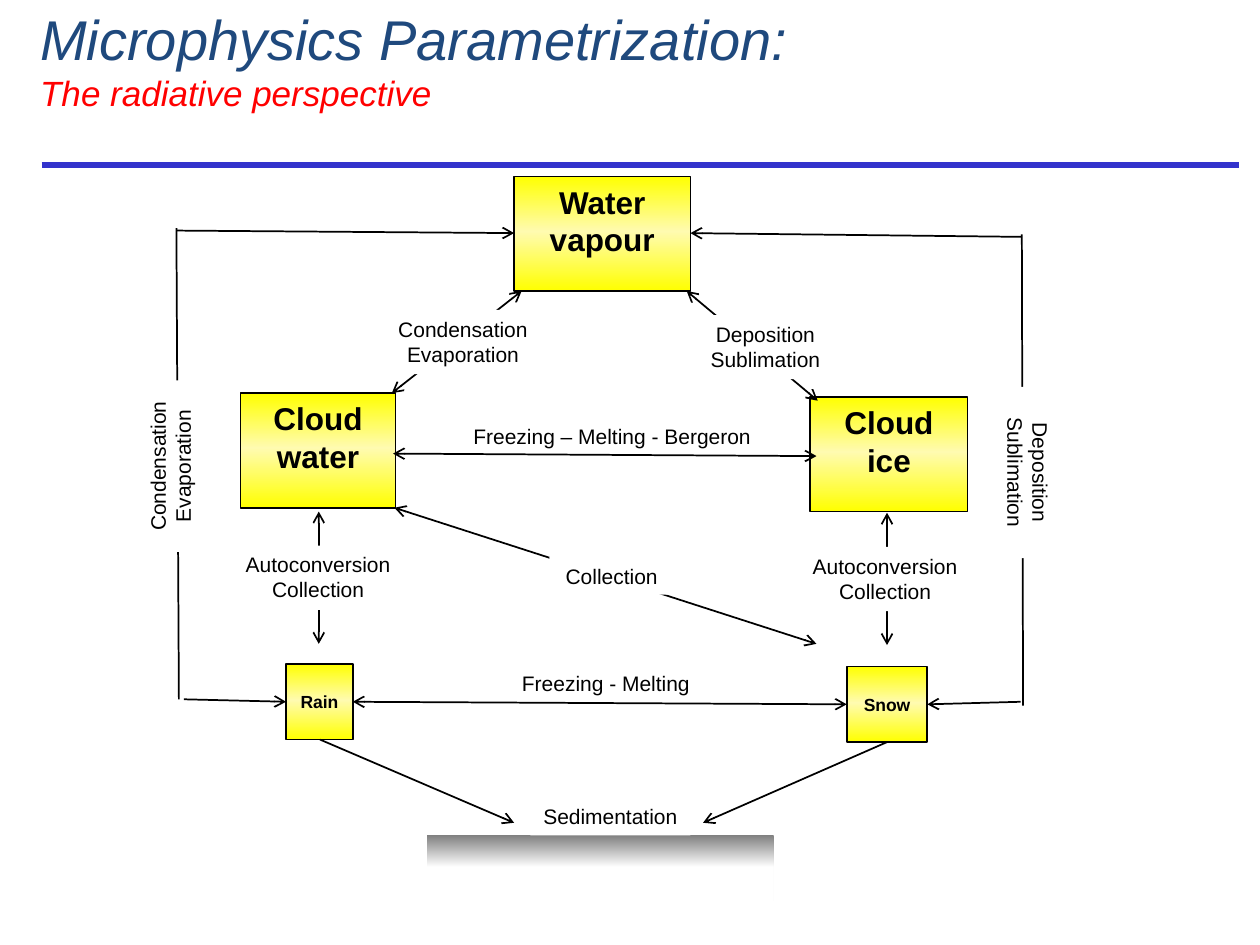
from lxml.etree import SubElement
from pptx import Presentation
from pptx.dml.color import RGBColor
from pptx.enum.shapes import MSO_CONNECTOR, MSO_SHAPE
from pptx.enum.text import MSO_ANCHOR, PP_ALIGN
from pptx.oxml.ns import qn
from pptx.util import Inches, Pt

BLACK = RGBColor(0x00, 0x00, 0x00)
WHITE = RGBColor(0xFF, 0xFF, 0xFF)
NAVY = RGBColor(0x1F, 0x49, 0x7D)
RED = RGBColor(0xFF, 0x00, 0x00)
BLUE = RGBColor(0x33, 0x33, 0xCC)
YELLOW = RGBColor(0xFF, 0xFF, 0x00)
CREAM = RGBColor(0xFF, 0xFB, 0xB0)
GREY = RGBColor(0x80, 0x80, 0x80)

YELLOW_STOPS = [(0, YELLOW), (48, CREAM), (100, YELLOW)]
GREY_STOPS = [(0, GREY), (49, WHITE)]

RESERVOIRS = [
    ("Water vapour", (4.08, 1.4, 1.4, 0.91), 18, MSO_ANCHOR.TOP),
    ("Cloud water", (1.91, 3.12, 1.23, 0.91), 18, MSO_ANCHOR.TOP),
    ("Cloud ice", (6.43, 3.15, 1.25, 0.91), 18, MSO_ANCHOR.TOP),
    ("Rain", (2.27, 5.27, 0.53, 0.6), 10, MSO_ANCHOR.MIDDLE),
    ("Snow", (6.72, 5.29, 0.64, 0.6), 10, MSO_ANCHOR.MIDDLE),
]
EXCHANGES = [
    (3.11, 3.12, 4.14, 2.31),
    (5.45, 2.31, 6.49, 3.18),
    (7.04, 4.07, 7.04, 5.12),
    (2.53, 4.06, 2.53, 5.11),
    (2.8, 5.57, 6.72, 5.59),
    (3.12, 3.6, 6.48, 3.62),
    (3.13, 4.03, 6.48, 5.11),
]
ONE_WAY = [
    (1.4, 1.83, 4.08, 1.85),
    (1.46, 5.55, 2.27, 5.57),
    (8.11, 1.88, 5.48, 1.85),
    (8.1, 5.57, 7.36, 5.59),
    (2.54, 5.87, 4.08, 6.53),
    (7.04, 5.89, 5.58, 6.53),
]
SIDES = [(1.4, 1.81, 1.42, 5.55), (8.11, 1.86, 8.12, 5.6)]
PLAIN_LABELS = [
    ("Freezing - Melting", (3.41, 5.27, 2.8, 0.3)),
    ("Freezing – Melting - Bergeron", (3.46, 3.31, 2.8, 0.3)),
]
MASKING_LABELS = [
    ("Autoconversion Collection", (6.14, 4.34, 1.77, 0.51), None),
    ("Autoconversion Collection", (1.64, 4.33, 1.77, 0.51), None),
    ("Deposition Sublimation", (5.19, 2.5, 1.77, 0.51), None),
    ("Condensation Evaporation", (2.79, 2.46, 1.77, 0.51), None),
    ("Collection", (4.36, 4.42, 0.99, 0.3), None),
    ("Condensation Evaporation", (1.1, 3.02, 0.61, 1.36), "vert270"),
    ("Deposition Sublimation", (7.8, 3.07, 0.61, 1.36), "vert"),
    ("Sedimentation", (4.21, 6.33, 1.27, 0.3), None),
]


def inches(box):
    """Turn a tuple of numbers into lengths."""
    return [Inches(v) for v in box]


def add_run(p, text, size, color, bold=False, italic=False):
    """Add one Arial run to a paragraph."""
    r = p.add_run()
    r.text = text
    r.font.name = "Arial"
    r.font.size = Pt(size)
    r.font.color.rgb = color
    r.font.bold = bold
    r.font.italic = italic


def set_gradient(sp, stops):
    """Fill a shape with a top-to-bottom gradient."""
    sp.fill.gradient()
    sp.fill.gradient_angle = 270
    gs_lst = sp._element.spPr.find(qn("a:gradFill")).find(qn("a:gsLst"))
    for gs in list(gs_lst):
        gs_lst.remove(gs)
    for pos, color in stops:
        gs = SubElement(gs_lst, qn("a:gs"), pos=str(pos * 1000))
        SubElement(gs, qn("a:srgbClr"), val=str(color))


def add_rect(s, box):
    """Add a rectangle without shadow or outline."""
    sp = s.shapes.add_shape(MSO_SHAPE.RECTANGLE, *inches(box))
    sp.shadow.inherit = False
    sp.line.fill.background()
    return sp


def set_centred(sp, text, size, anchor=MSO_ANCHOR.TOP, bold=False):
    """Write one centred, wrapped paragraph in a shape."""
    tf = sp.text_frame
    tf.word_wrap = True
    tf.vertical_anchor = anchor
    p = tf.paragraphs[0]
    p.alignment = PP_ALIGN.CENTER
    add_run(p, text, size, BLACK, bold)


def add_line(s, ends, color=BLACK, width=1, head=False, tail=False):
    """Draw a straight line with optional arrowheads."""
    cn = s.shapes.add_connector(MSO_CONNECTOR.STRAIGHT, *inches(ends))
    cn.line.color.rgb = color
    cn.line.width = Pt(width)
    ln = cn.line._get_or_add_ln()
    for tag, wanted in (("a:headEnd", head), ("a:tailEnd", tail)):
        if wanted:
            SubElement(ln, qn(tag), type="arrow")
    SubElement(cn._element.spPr, qn("a:effectLst"))


def add_reservoir(s, text, box, size, anchor):
    """Add a yellow box for one water category."""
    sp = add_rect(s, box)
    set_gradient(sp, YELLOW_STOPS)
    sp.line.color.rgb = BLACK
    sp.line.width = Pt(1)
    set_centred(sp, text, size, anchor, bold=True)


def add_masking_label(s, text, box, vert):
    """Add a process name on white that interrupts the line beneath."""
    sp = add_rect(s, box)
    sp.fill.solid()
    sp.fill.fore_color.rgb = WHITE
    set_centred(sp, text, 12)
    if vert:
        sp.text_frame._txBody.bodyPr.set("vert", vert)


def add_header(s, box):
    """Add the two-line title and the rule below it."""
    add_line(s, (0.33, 1.31, 9.83, 1.31), BLUE, 3)
    tf = s.shapes.add_textbox(*inches(box)).text_frame
    tf.word_wrap = True
    tf.vertical_anchor = MSO_ANCHOR.MIDDLE
    add_run(tf.paragraphs[0], "Microphysics Parametrization:", 32, NAVY, italic=True)
    add_run(tf.add_paragraph(), "The radiative perspective", 20, RED, italic=True)


def add_diagram(s, ground_box):
    """Add the water categories, the processes between them and the ground."""
    for reservoir in RESERVOIRS:
        add_reservoir(s, *reservoir)
    for ends in EXCHANGES:
        add_line(s, ends, head=True, tail=True)
    for ends in ONE_WAY:
        add_line(s, ends, tail=True)
    for ends in SIDES:
        add_line(s, ends)
    set_gradient(add_rect(s, ground_box), GREY_STOPS)
    for text, box in PLAIN_LABELS:
        set_centred(s.shapes.add_textbox(*inches(box)), text, 12)
    for label in MASKING_LABELS:
        add_masking_label(s, *label)


def main():
    """Build and save the slide."""
    prs = Presentation()
    prs.slide_width, prs.slide_height = Inches(10), Inches(7.5)
    s = prs.slides.add_slide(prs.slide_layouts[6])
    add_header(s, (0.22, 0.16, 7.42, 0.62))
    add_diagram(s, (3.39, 6.63, 2.75, 0.52))
    prs.save("out.pptx")


if __name__ == "__main__":
    main()
